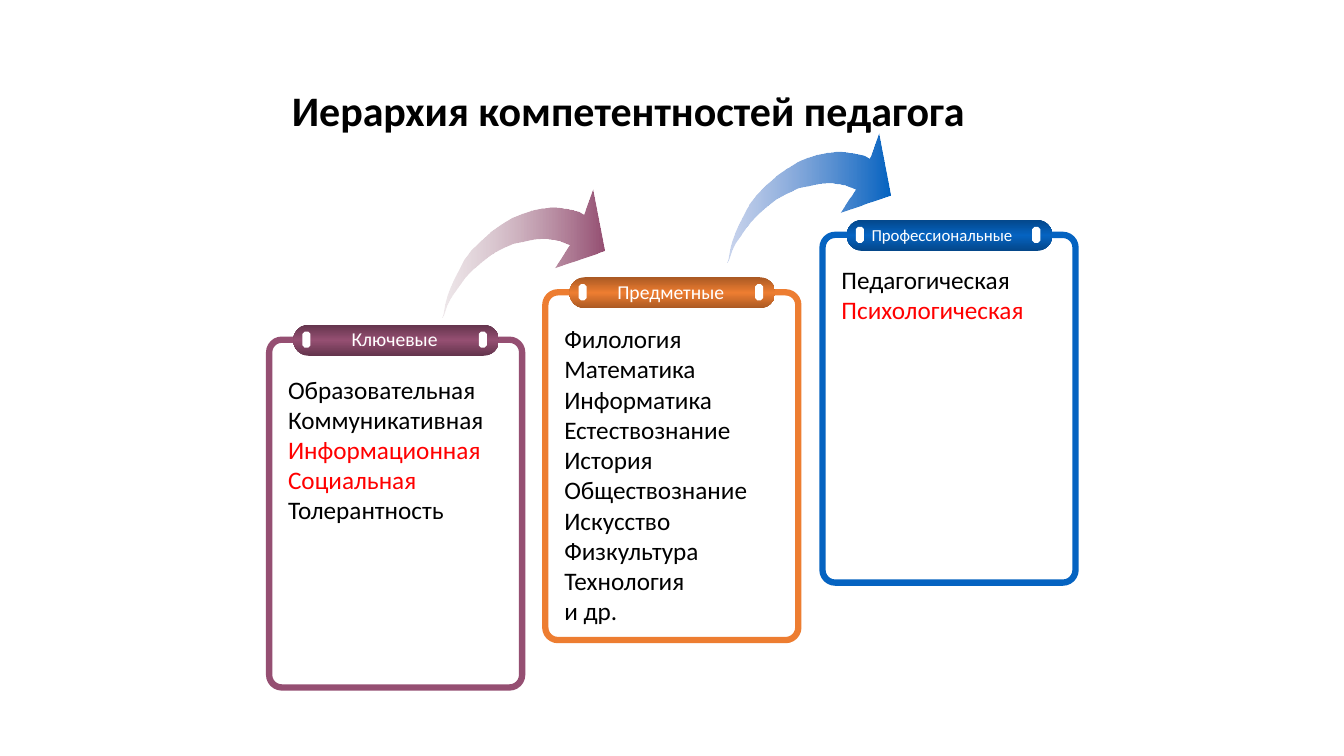
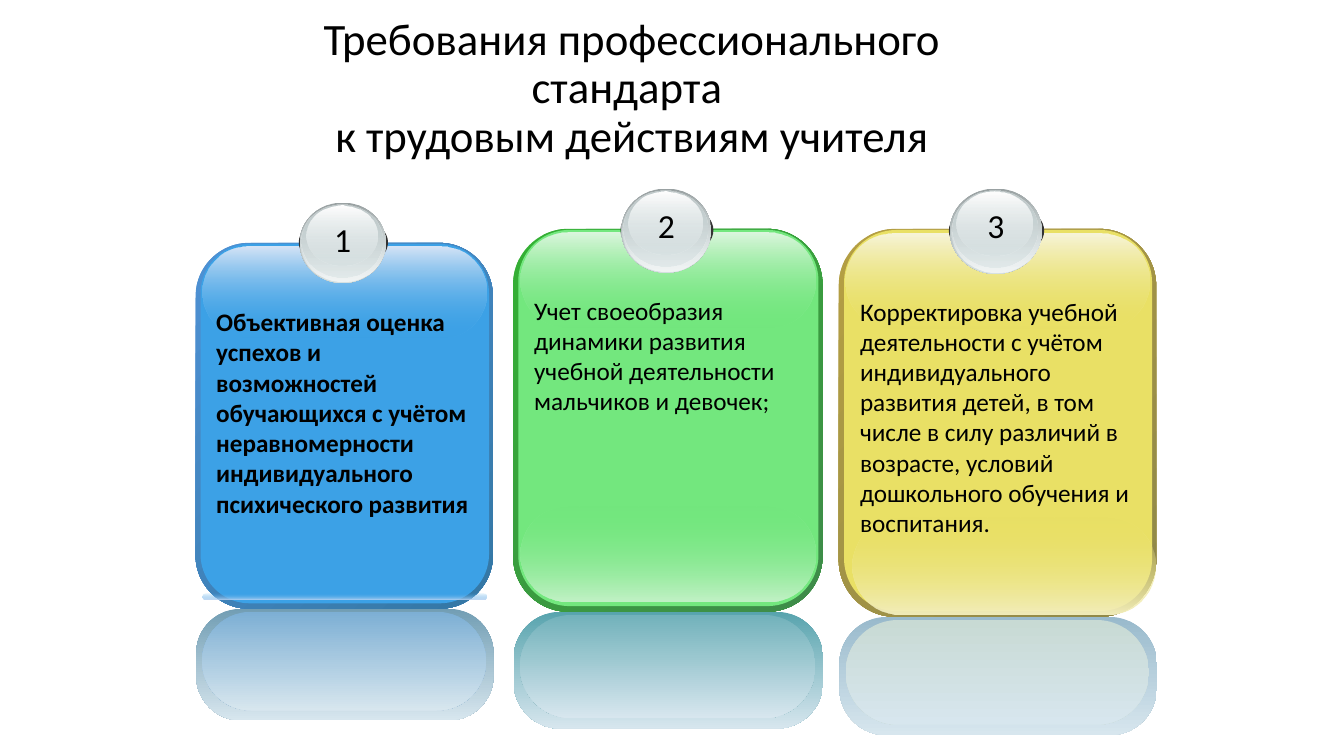
from lxml.etree import SubElement
from pptx import Presentation
from pptx.dml.color import RGBColor
from pptx.enum.shapes import MSO_SHAPE
from pptx.enum.text import MSO_ANCHOR, PP_ALIGN
from pptx.oxml.ns import qn
from pptx.util import Inches, Pt

CELL = Inches(0.1)
COLS, ROWS = 133.33, 75
FONT = "Calibri"

BLACK = RGBColor.from_string("000000")
WHITE = RGBColor.from_string("FFFFFF")
RED = RGBColor.from_string("FF0000")
COAL = RGBColor.from_string("333333")

PLUM = RGBColor.from_string("954F72")
PLUM_DARK = RGBColor.from_string("63344C")
PLUM_PALE = RGBColor.from_string("CBB6BF")
RUST = RGBColor.from_string("ED7D31")
RUST_DARK = RGBColor.from_string("AA5923")
NAVY = RGBColor.from_string("0563C1")
NAVY_DARK = RGBColor.from_string("04478A")
NAVY_PALE = RGBColor.from_string("5A7DC8")

STEEL = RGBColor.from_string("99A1A2")
ASH = RGBColor.from_string("C1CBCC")
SILVER = RGBColor.from_string("D6E1E2")
PEARL = RGBColor.from_string("F2F5F5")
MIST = RGBColor.from_string("D7E6EE")

BLUE = RGBColor.from_string("3CA1E6")
BLUE_RIM = RGBColor.from_string("4E91D4")
BLUE_DEEP = RGBColor.from_string("3477A4")
BLUE_PALE = RGBColor.from_string("D7E5F7")
BLUE_GLOW = RGBColor.from_string("BDD6F3")
BLUE_POOL = RGBColor.from_string("729EB4")
BLUE_CORE = RGBColor.from_string("7DAFD4")
GREEN = RGBColor.from_string("73E77E")
GREEN_RIM = RGBColor.from_string("34B034")
GREEN_DEEP = RGBColor.from_string("3F8B4A")
GREEN_PALE = RGBColor.from_string("DDF7DF")
GREEN_GLOW = RGBColor.from_string("C3F2C7")
GREEN_POOL = RGBColor.from_string("58A4AE")
GREEN_CORE = RGBColor.from_string("72B2BB")
GOLD = RGBColor.from_string("E9E065")
GOLD_RIM = RGBColor.from_string("B59F43")
GOLD_DEEP = RGBColor.from_string("8F8849")
GOLD_PALE = RGBColor.from_string("F8F5DB")
GOLD_GLOW = RGBColor.from_string("F3EEBB")
GOLD_POOL = RGBColor.from_string("99BACC")
GOLD_CORE = RGBColor.from_string("C8DAD4")

ARROW = [
    (0, 127), (2, 123), (5, 114), (8, 108), (13, 101), (18, 94), (23, 87),
    (31, 79), (39, 72), (48, 65), (59, 59), (70, 54), (80, 52), (89, 50),
    (97, 49), (104, 49), (111, 50), (116, 51), (126, 55),
    (111, 78), (161, 61), (149, 0), (140, 25),
    (135, 22), (126, 20), (120, 19), (113, 18), (106, 18), (98, 19),
    (88, 21), (79, 24), (69, 28), (58, 35), (48, 42), (38, 51), (29, 60),
    (22, 69), (17, 79), (12, 88), (8, 97), (5, 105), (3, 112), (1, 123),
]

BADGE = [
    ((-1, 15, 103.5, 69), [COAL]),
    ((0, 0, 100, 100), [STEEL, SILVER]),
    ((1.5, 1, 98, 97.5), [(SILVER, 0), PEARL]),
    ((2.5, 2, 93, 91), [ASH, (SILVER, 48)]),
    ((7.5, 4, 82.5, 74), [WHITE, (SILVER, 38)]),
]


def place(box):
    return [int(side * CELL) for side in box]


def share(box, part):
    x, y, w, h = box
    dx, dy, dw, dh = (value / 100 for value in part)
    return x + w * dx, y + h * dy, w * dw, h * dh


def paint(shape, stops, angle=90):
    shape.shadow.inherit = False
    shape.line.fill.background()
    if len(stops) == 1:
        shape.fill.solid()
        shape.fill.fore_color.rgb = stops[0]
        return
    shape.fill.gradient()
    grad = shape.element.spPr.find(qn("a:gradFill"))
    for child in list(grad):
        grad.remove(child)
    ramp = SubElement(grad, qn("a:gsLst"))
    for i, stop in enumerate(stops):
        tone, alpha = stop if isinstance(stop[0], RGBColor) else (stop, 100)
        pos = 100000 * i // (len(stops) - 1)
        point = SubElement(ramp, qn("a:gs"), pos=str(pos))
        color = SubElement(point, qn("a:srgbClr"), val=str(tone))
        SubElement(color, qn("a:alpha"), val=str(alpha * 1000))
    SubElement(grad, qn("a:lin"), ang=str(angle * 60000), scaled="0")


def block(slide, kind, box, stops, bend=None, angle=90):
    shape = slide.shapes.add_shape(kind, *place(box))
    if bend is not None:
        shape.adjustments[0] = bend
    paint(shape, stops, angle)
    return shape


def round_box(slide, box, stops, bend=0.5, angle=90):
    return block(slide, MSO_SHAPE.ROUNDED_RECTANGLE, box, stops, bend, angle)


def add_run(para, text, size, color=BLACK, bold=False, glow=False):
    run = para.add_run()
    run.text = text
    font = run.font
    font.size, font.bold, font.name = Pt(size), bold, FONT
    font.color.rgb = color
    if glow:
        effects = SubElement(font._element, qn("a:effectLst"))
        cast = SubElement(effects, qn("a:outerShdw"), blurRad="38100",
                          dist="38100", dir="2700000", algn="tl")
        tone = SubElement(cast, qn("a:srgbClr"), val=str(BLACK))
        SubElement(tone, qn("a:alpha"), val="43000")
        font._element.find(qn("a:solidFill")).addnext(effects)


def write(slide, box, lines, size, align=PP_ALIGN.LEFT, **style):
    frame = slide.shapes.add_textbox(*place(box)).text_frame
    frame.word_wrap = True
    for i, (text, color) in enumerate(lines):
        para = frame.add_paragraph() if i else frame.paragraphs[0]
        para.alignment = align
        add_run(para, text, size, color, **style)


def start(deck, box, lines, size, bold=False):
    slide = deck.slides.add_slide(deck.slide_layouts[5])
    title = slide.shapes.title
    title.left, title.top, title.width, title.height = place(box)
    frame = title.text_frame
    frame.word_wrap = True
    frame.vertical_anchor = MSO_ANCHOR.MIDDLE
    para = frame.paragraphs[0]
    para.alignment = PP_ALIGN.CENTER
    para.line_spacing = 0.9
    for i, text in enumerate(lines):
        if i:
            para.add_line_break()
        add_run(para, text, size, bold=bold)
    return slide


def arrow(slide, x, y, stops):
    pen = slide.shapes.build_freeform(*ARROW[0], scale=CELL / 10)
    pen.add_line_segments(ARROW[1:], close=True)
    paint(pen.convert_to_shape(*place((x, y))), stops, 0)


def panel(slide, x, y, tone, dark, label, lines, size=14, mid=12.45,
          drop=2.6, glow=True):
    frame = round_box(slide, (x, y, 25.1, 34.5), [WHITE], 0.05)
    frame.fill.background()
    frame.line.color.rgb = tone
    frame.line.width = Pt(4.5)
    left, top = x + 2.4, y - 1.5
    round_box(slide, (left, top, 20.4, 3.1), [dark, tone, dark])
    for step in (0.9, 18.4):
        block(slide, MSO_SHAPE.OCTAGON, (left + step, top + 0.7, 0.8, 1.6),
              [WHITE], 0.29)
    write(slide, (x + mid - 10.25, y + 0.1 - size * 0.13, 20.5, 3.4),
          [(label, WHITE)], size, PP_ALIGN.CENTER)
    write(slide, (x + 0.9, y + drop, 23.3, 30), lines, 18, glow=glow)


def badge(slide, box, text):
    for part, stops in BADGE:
        block(slide, MSO_SHAPE.OVAL, share(box, part), stops)
    x, y, w, h = box
    write(slide, (x, y + 1.1, w, 5), [(text, BLACK)], 24, PP_ALIGN.CENTER)


def card(slide, box, mark, text, face, rim, shine, glow, pool, foot,
         bold=False):
    x, y, w, h = box
    clear = (face, 0)
    round_box(slide, box, rim, 0.18, 45)
    round_box(slide, share(box, (1.7, 0.3, 97, 98.2)), [face], 0.17)
    round_box(slide, share(box, foot), [clear, glow])
    round_box(slide, share(box, (2.3, 1.1, 95.5, 24.7)), [shine, clear])
    round_box(slide, share(box, (0.2, 100, 100, 30.5)), [pool[0], MIST], 0.4)
    round_box(slide, share(box, (2.2, 100.8, 95.5, 27)), [pool[1], MIST])
    badge(slide, (x + w * 0.35, y - 4, w * 0.29, h * 0.22), mark)
    write(slide, share(box, (3.6, 16, 95.2, 65)), [(text, BLACK)], 18,
          bold=bold)


def ladder(deck):
    slide = start(deck, (26.7, 4, 71.3, 14.5),
                  ["Иерархия компетентностей педагога"], 30, True)
    arrow(slide, 72.2, 13.3, [(NAVY_PALE, 32), NAVY])
    arrow(slide, 43.9, 18.8, [(PLUM_PALE, 32), PLUM])
    panel(slide, 26.7, 33.7, PLUM, PLUM_DARK, "Ключевые",
          [("Образовательная", BLACK), ("Коммуникативная", BLACK),
           ("Информационная", RED), ("Социальная", RED),
           ("Толерантность", BLACK)], drop=2.9)
    topics = ["Филология", "Математика Информатика", "Естествознание",
              "История", "Обществознание", "Искусство", "Физкультура",
              "Технология", "и др."]
    panel(slide, 54.1, 29, RUST, RUST_DARK, "Предметные",
          [(topic, BLACK) for topic in topics], glow=False)
    panel(slide, 81.6, 23.3, NAVY, NAVY_DARK, "Профессиональные",
          [("Педагогическая", BLACK), ("Психологическая", RED)],
          size=12, mid=11.85, drop=2.4)


def demands(deck):
    slide = start(deck, (24.9, 5.2, 75.6, 7.3),
                  ["Требования профессионального стандарта ",
                   "к трудовым действиям учителя"], 32)
    card(slide, (19.4, 24.1, 29.5, 36.3), "1",
         "Объективная оценка успехов и возможностей обучающихся с учётом "
         "неравномерности индивидуального психического развития",
         BLUE, [BLUE_RIM, BLUE_DEEP], BLUE_PALE, BLUE_GLOW,
         [BLUE_POOL, BLUE_CORE], (2.3, 95.9, 95.5, 1.6), bold=True)
    card(slide, (50.9, 22.7, 30.7, 38), "2",
         "Учет своеобразия динамики развития учебной деятельности "
         "мальчиков и девочек;",
         GREEN, [GREEN_RIM, GREEN_DEEP], GREEN_PALE, GREEN_GLOW,
         [GREEN_POOL, GREEN_CORE], (2.3, 72.6, 95.5, 24.7))
    card(slide, (83.2, 22.7, 31.5, 38.5), "3",
         "Корректировка учебной деятельности с учётом индивидуального "
         "развития детей, в том числе в силу различий в возрасте, условий "
         "дошкольного обучения и воспитания.",
         GOLD, [GOLD_RIM, GOLD_DEEP], GOLD_PALE, GOLD_GLOW,
         [GOLD_POOL, GOLD_CORE], (4.4, 74.5, 95.5, 24.9))


def main():
    deck = Presentation()
    deck.slide_width, deck.slide_height = place((COLS, ROWS))
    ladder(deck)
    demands(deck)
    deck.save("out.pptx")


if __name__ == "__main__":
    main()
